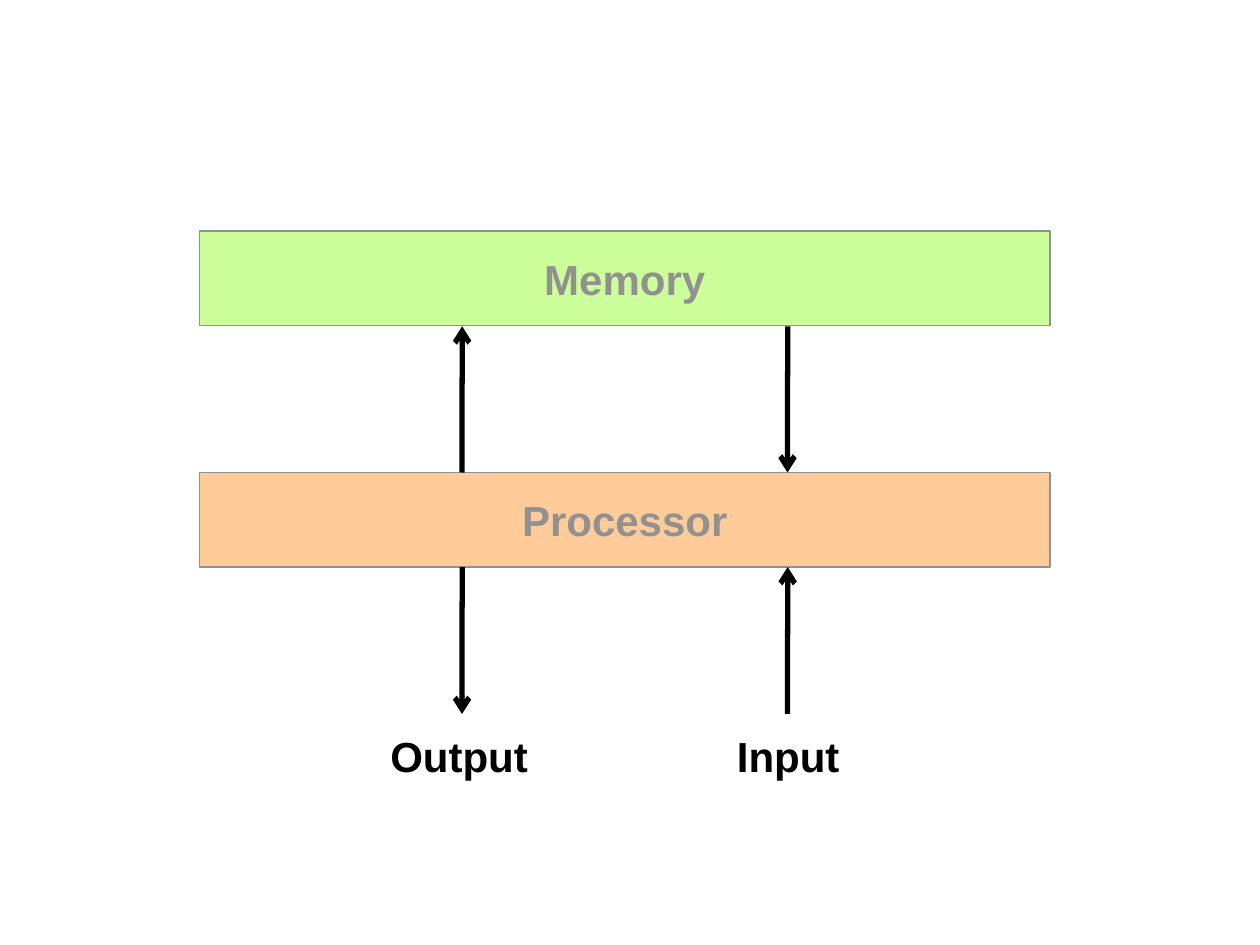
import pptx
import pptx.util
import pptx.dml.color
import pptx.enum.shapes
import pptx.enum.text
import pptx.oxml.ns
from dataclasses import dataclass
from lxml import etree


@dataclass(frozen=True)
class Theme:
    font: str = "Arial"
    text_size: int = 24
    box_line: float = 0.75
    arrow_line: float = 3
    memory: str = "CCFF99"
    processor: str = "FFCC99"
    muted: str = "919191"
    ink: str = "000000"


theme = Theme()
rgb = pptx.dml.color.RGBColor.from_string

deck = pptx.Presentation()
deck.slide_width = pptx.util.Inches(10)
deck.slide_height = pptx.util.Inches(7.5)
page = deck.slides.add_slide(deck.slide_layouts[6])

# Grid of 120 columns by 90 rows
column = deck.slide_width / 120
row = deck.slide_height / 90


def place(left, top, width, height):
    return [round(left * column), round(top * row), round(width * column), round(height * row)]


def write(shape, text, color, alignment):
    shape.text_frame.text = text
    para = shape.text_frame.paragraphs[0]
    para.alignment = alignment
    span = para.runs[0]
    span.font.name = theme.font
    span.font.size = pptx.util.Pt(theme.text_size)
    span.font.bold = True
    span.font.color.rgb = rgb(color)


# Memory and processor bars
for text, top, fill in [("Memory", 22, theme.memory), ("Processor", 45, theme.processor)]:
    box = page.shapes.add_shape(
        pptx.enum.shapes.MSO_SHAPE.RECTANGLE, *place(19, top, 81, 9))
    box.shadow.inherit = False
    box.fill.solid()
    box.fill.fore_color.rgb = rgb(fill)
    box.line.color.rgb = rgb(theme.muted)
    box.line.width = pptx.util.Pt(theme.box_line)
    box.text_frame.vertical_anchor = pptx.enum.text.MSO_ANCHOR.MIDDLE
    write(box, text, theme.muted, pptx.enum.text.PP_ALIGN.CENTER)

# Data flow arrows: column, start row, end row; the upper end leans slightly right
output_column, input_column = 44, 75
lean = 0.02
for across, start, end in [
    (output_column, 45, 31.08),
    (input_column, 31.08, 45),
    (input_column, 68, 54),
    (output_column, 54, 68),
]:
    start_lean, end_lean = (lean, 0) if start < end else (0, lean)
    arrow = page.shapes.add_connector(
        pptx.enum.shapes.MSO_CONNECTOR.STRAIGHT,
        *place(across + start_lean, start, across + end_lean, end))
    arrow.line.color.rgb = rgb(theme.ink)
    arrow.line.width = pptx.util.Pt(theme.arrow_line)
    outline = arrow._element.spPr.find(pptx.oxml.ns.qn("a:ln"))
    etree.SubElement(outline, pptx.oxml.ns.qn("a:tailEnd"), type="arrow")
    etree.SubElement(arrow._element.spPr, pptx.oxml.ns.qn("a:effectLst"))

# Output and input labels
for text, left, width in [("Output", 36, 15.6), ("Input", 69, 12.25)]:
    label = page.shapes.add_textbox(*place(left, 69, width, 6.1))
    label.text_frame.word_wrap = False
    label.text_frame.auto_size = pptx.enum.text.MSO_AUTO_SIZE.SHAPE_TO_FIT_TEXT
    write(label, text, theme.ink, pptx.enum.text.PP_ALIGN.LEFT)

deck.save("out.pptx")
